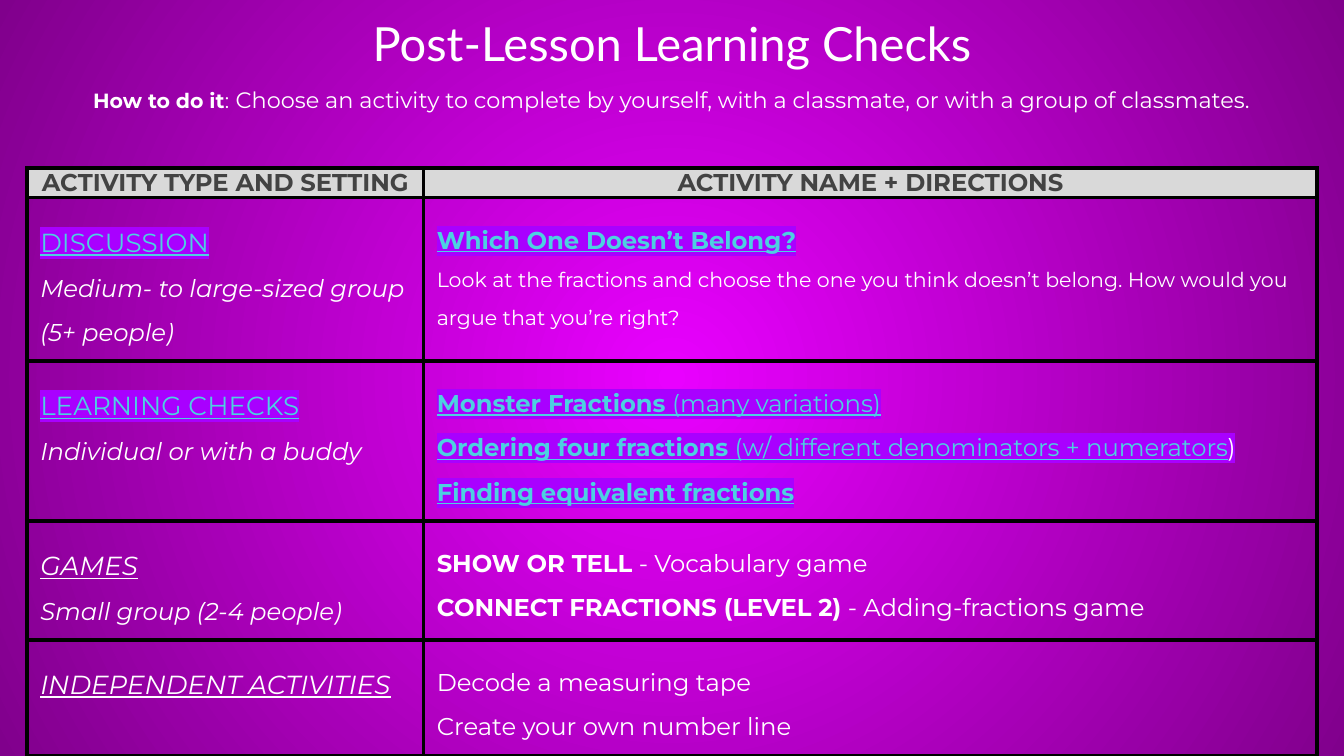
from pptx import Presentation
from pptx import util as u
from pptx.dml.color import RGBColor
from pptx.enum import text
from pptx.oxml import parse_xml
from pptx.oxml.ns import qn

NS = ('xmlns:a="http://schemas.openxmlformats.org/drawingml/2006/main" '
      'xmlns:p="http://schemas.openxmlformats.org/presentationml/2006/main"')
WHITE, CYAN, VIOLET, GREY = "FFFFFF", "4DD0E1", "A900FF", "434343"
W = 10
H = W * 9 / 16

# Run styles
PLAIN = dict(size=13)
BOLD = dict(size=13, bold=True)
ITALIC = dict(size=13, italic=True)
SMALL = dict(size=11)
HEAD = dict(size=13, bold=True, color=GREY)
LINK = dict(size=13, color=CYAN, underline=True, highlight=VIOLET)
BOLD_LINK = dict(LINK, bold=True)
TYPE_LINK = dict(LINK, size=14)
TYPE = dict(size=14, italic=True, underline=True)

TITLE = [("Post-Lesson Learning Checks", dict(size=25.2, font="Lato"))]
INTRO = [
    ("How to do it", dict(size=11, bold=True)),
    (":", SMALL),
    (" ", dict(size=12, bold=True)),
    ("Choose an activity to complete by yourself, with a classmate, "
     "or with a group of classmates.", dict(size=12)),
]
HEADER = ["ACTIVITY TYPE AND SETTING", "ACTIVITY NAME + DIRECTIONS"]
# Each row holds two cells; a cell is a list of paragraphs, a paragraph a list of runs
ACTIVITIES = [
    ([[("DISCUSSION", TYPE_LINK)],
      [("Medium- to large-sized group (5+ people)", ITALIC)]],
     [[("Which One Doesn’t Belong?", BOLD_LINK)],
      [("Look at the fractions and choose the one you think doesn’t belong. "
        "How would you argue that you’re right?", SMALL)]]),
    ([[("LEARNING CHECKS", TYPE_LINK)],
      [("Individual or with a buddy", ITALIC)]],
     [[("Monster Fractions ", BOLD_LINK), ("(many variations)", LINK)],
      [("Ordering four fractions", BOLD_LINK),
       (" (w/ different denominators + numerators", LINK),
       (")", dict(size=13, highlight=VIOLET))],
      [("Finding equivalent fractions", BOLD_LINK)]]),
    ([[("GAMES", TYPE)],
      [("Small group (2-4 people)", ITALIC)]],
     [[("SHOW OR TELL ", BOLD), ("- Vocabulary game", PLAIN)],
      [("CONNECT FRACTIONS (LEVEL 2) ", BOLD), ("- Adding-fractions game", PLAIN)]]),
    ([[("INDEPENDENT ACTIVITIES", TYPE)]],
     [[("Decode a measuring tape", PLAIN)],
      [("Create your own number line", PLAIN)]]),
]
COLS = [2.95, 6.65]
ROWS = [0.21, 1.01, 1.08, 0.72, 0.84]
FRAME = 3.28  # nominal frame side; rows and columns set the drawn size


def rgb(color):
    return RGBColor.from_string(color)


def add_run(p, words, size, font="Montserrat", color=WHITE, bold=False,
            italic=False, underline=False, highlight=None):
    r = p.add_run()
    r.text = words
    f = r.font
    f.size, f.name, f.bold, f.italic, f.underline = u.Pt(size), font, bold, italic, underline
    f.color.rgb = rgb(color)
    if highlight:
        r._r.rPr.find(qn("a:solidFill")).addnext(parse_xml(
            f'<a:highlight {NS}><a:srgbClr val="{highlight}"/></a:highlight>'))


def write(tf, paragraphs, align=None, spacing=None):
    for i, runs in enumerate(paragraphs):
        p = tf.add_paragraph() if i else tf.paragraphs[0]
        p.alignment, p.line_spacing = align, spacing
        for words, style in runs:
            add_run(p, words, **style)


def set_margins(box, inset=0.1):
    box.margin_left = box.margin_right = u.Inches(inset)
    box.margin_top = box.margin_bottom = u.Inches(inset)


def fill_cell(cell, paragraphs, fill=None, inset=0.1, **layout):
    write(cell.text_frame, paragraphs, **layout)
    set_margins(cell, inset)
    if fill:
        cell.fill.solid()
        cell.fill.fore_color.rgb = rgb(fill)
    else:
        cell.fill.background()
    for i, side in enumerate("LRTB"):
        cell._tc.tcPr.insert(i, parse_xml(
            f'<a:ln{side} {NS} w="{u.Pt(2.25)}"><a:solidFill><a:srgbClr val="000000"/>'
            f'</a:solidFill></a:ln{side}>'))


def radial_background(s, inner, outer, alpha):
    s._element.cSld.insert(0, parse_xml(
        f'<p:bg {NS}><p:bgPr><a:gradFill><a:gsLst>'
        f'<a:gs pos="0"><a:srgbClr val="{inner}"><a:alpha val="{alpha * 1000}"/></a:srgbClr></a:gs>'
        f'<a:gs pos="100000"><a:srgbClr val="{outer}"/></a:gs></a:gsLst>'
        '<a:path path="circle"><a:fillToRect l="50000" t="50000" r="50000" b="50000"/></a:path>'
        '</a:gradFill><a:effectLst/></p:bgPr></p:bg>'))


def centred(width):
    return u.Inches((W - width) / 2)


prs = Presentation()
prs.slide_width, prs.slide_height = u.Inches(W), u.Inches(H)
s = prs.slides.add_slide(prs.slide_layouts[5])
radial_background(s, "E900FF", "80008C", alpha=92)

frame = s.shapes.add_table(len(ROWS), len(COLS), centred(sum(COLS)), u.Inches(1.25),
                           u.Inches(FRAME), u.Inches(FRAME))
table = frame.table
table.first_row = table.horz_banding = False
for col, width in zip(table.columns, COLS):
    col.width = u.Inches(width)
for row, height in zip(table.rows, ROWS):
    row.height = u.Inches(height)
frame.width = frame.height = u.Inches(FRAME)

for c, label in enumerate(HEADER):
    cell = table.cell(0, c)
    fill_cell(cell, [[(label, HEAD)]], fill="D9D9D9", inset=0, align=text.PP_ALIGN.CENTER)
    cell.vertical_anchor = text.MSO_ANCHOR.MIDDLE
for r, activity in enumerate(ACTIVITIES, start=1):
    for c, paragraphs in enumerate(activity):
        fill_cell(table.cell(r, c), paragraphs, spacing=1.5)

title = s.shapes.title
title.left, title.top = centred(9.32), 0
title.width, title.height = u.Inches(9.32), u.Inches(0.64)
title.text_frame.auto_size = text.MSO_AUTO_SIZE.NONE
set_margins(title.text_frame)
write(title.text_frame, [TITLE], align=text.PP_ALIGN.CENTER)

intro = s.shapes.add_textbox(centred(9.26), u.Inches(0.54), u.Inches(9.26), u.Inches(0.4))
intro.text_frame.word_wrap = True
intro.text_frame.auto_size = text.MSO_AUTO_SIZE.SHAPE_TO_FIT_TEXT
set_margins(intro.text_frame)
write(intro.text_frame, [INTRO], align=text.PP_ALIGN.CENTER)

prs.save("out.pptx")
